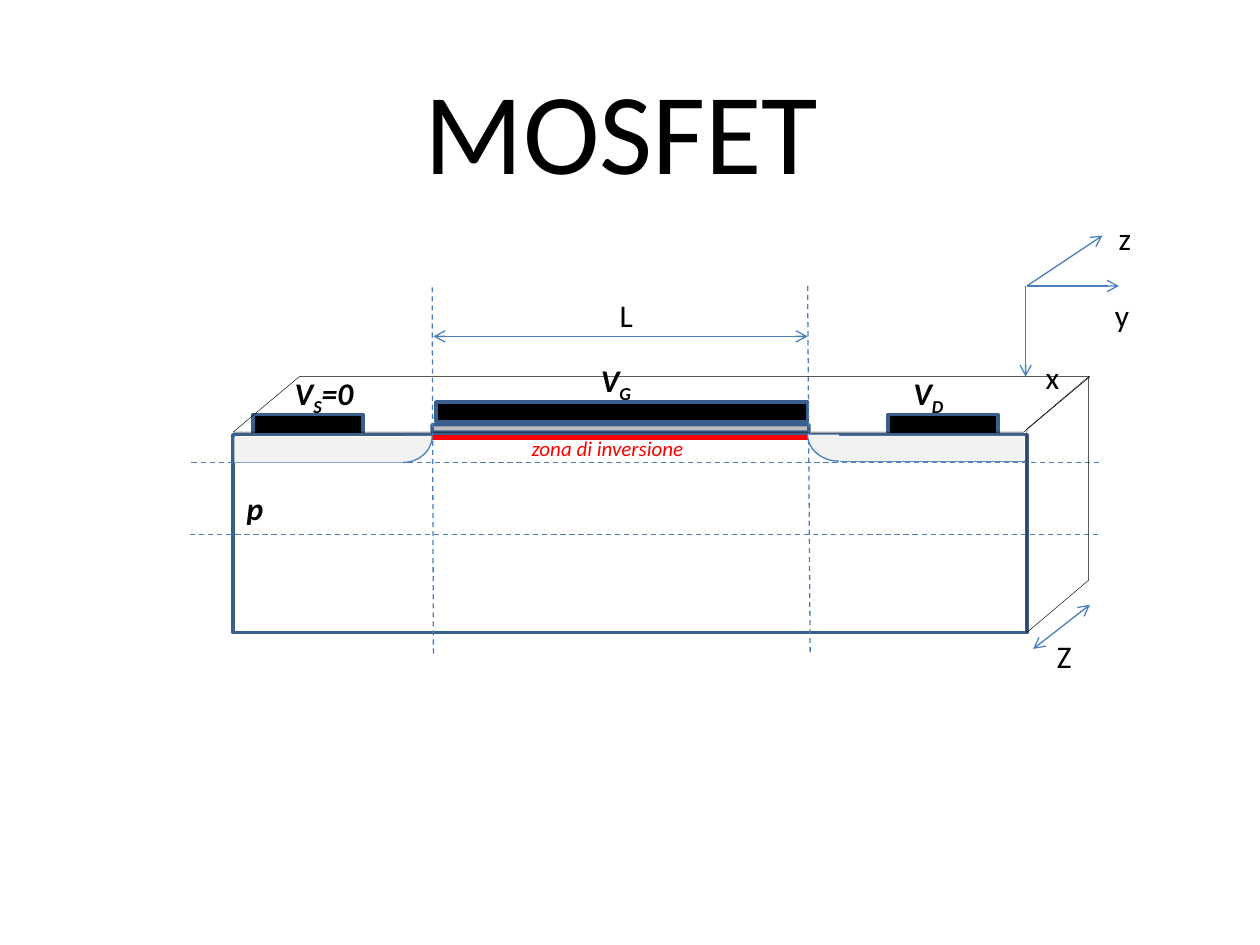
from lxml import etree
from pptx import Presentation
from pptx import util as u
from pptx.dml.color import RGBColor
from pptx.enum import dml, shapes, text
from pptx.oxml.ns import qn

PX = 9144  # EMU per px, 100 px to the inch
BLACK = RGBColor(0, 0, 0)
WHITE = RGBColor(255, 255, 255)
RED = RGBColor(255, 0, 0)
BLUE = RGBColor(0x4B, 0x7E, 0xBC)
NAVY = RGBColor(0x3A, 0x5F, 0x8C)
OXIDE = RGBColor(0xBF, 0xBF, 0xBF)
WELL = RGBColor(0xF2, 0xF2, 0xF2)

KIND = shapes.MSO_SHAPE
RECT, ROUND, SLANT, ARC = KIND.RECTANGLE, KIND.ROUNDED_RECTANGLE, KIND.PARALLELOGRAM, KIND.ARC
EDGE, THIN, HAIR = (NAVY, 2), (BLUE, 0.75), (BLACK, 0.25)

# Shapes: kind, (left, top, width, height), fill, line, other settings
DEVICE = [
    (RECT, (185, 345, 630, 157), None, EDGE, {}),  # substrate
    (RECT, (201, 329, 87, 16), BLACK, EDGE, {}),  # source contact
    (RECT, (705, 329, 87, 16), BLACK, EDGE, {}),  # drain contact
    (RECT, (327, 312, 331, 31), WHITE, None, {}),
    (RECT, (346, 319, 295, 16), BLACK, EDGE, {}),  # gate contact
    (ROUND, (343, 337, 299, 6), OXIDE, EDGE, {"flip": "flipV"}),
]
DEPTH_FACES = [
    (SLANT, (185, 299, 680, 44), None, HAIR, {"adjust": 1.194}),
    (SLANT, (738, 376, 203, 49), None, HAIR, {"adjust": 0.846, "turn": 270, "flip": "flipV"}),
]
WELL_CORNERS = [
    (ARC, (299, 323, 42, 46), WELL, THIN, {"turn": 90}),
    (ARC, (645, 320, 42, 50), WELL, THIN, {"turn": 270, "flip": "flipH"}),
]
WELL_BODIES = [
    (RECT, (186, 347, 134, 20), WELL, None, {}),
    (RECT, (666, 346, 147, 20), WELL, None, {}),
]

# Lines: start, end, (colour, points), style: dash, arrow or both
GUIDES = [
    ((151, 424), (874, 424), THIN, "dash"),
    ((343, 228), (344, 519), THIN, "dash"),
    ((641, 227), (643, 519), THIN, "dash"),
    ((152, 367), (875, 367), THIN, "dash"),
]
ARROWS = [
    ((344, 267), (641, 267), THIN, "both"),  # channel length
    ((815, 227), (888, 227), THIN, "arrow"),  # y axis
    ((814, 227), (814, 299), THIN, "arrow"),  # x axis
    ((815, 227), (875, 187), THIN, "arrow"),  # z axis
    ((820, 515), (865, 480), THIN, "both"),  # channel width
]
INVERSION_LAYER = [((343, 347), (642, 347), (RED, 3), "")]
WELL_FLOORS = [
    ((320, 367), (186, 367), THIN, ""),
    ((667, 366), (814, 366), THIN, ""),
]

# Labels: (left, top, width, height), runs (an underscore marks a subscript), format
PLAIN = {"size": u.Pt(18)}
STRONG = {"size": u.Pt(18), "bold": True, "italic": True}
LABELS = [
    ((482, 230, 31, 40), ["L"], PLAIN),
    ((875, 230, 32, 40), ["y"], PLAIN),
    ((820, 279, 32, 40), ["x"], PLAIN),
    ((878, 169, 30, 40), ["z"], PLAIN),
    ((829, 501, 32, 40), ["Z"], PLAIN),
    ((186, 383, 34, 40), ["p"], STRONG),
    ((224, 292, 68, 40), ["V", "_S", "=0"], STRONG),
    ((715, 292, 46, 40), ["V", "_D"], STRONG),
    ((467, 282, 45, 40), ["V", "_G"], STRONG),
    ((412, 341, 142, 30), ["zona di inversione"], {"size": u.Pt(12), "italic": True, "color": RED}),
    ((327, 42, 336, 121), ["MOSFET"], {"size": u.Pt(66)}),
]


def px(values):
    return [value * PX for value in values]


def add_shapes(page, items):
    for kind, place, fill, line, extra in items:
        shape = page.shapes.add_shape(kind, *px(place))
        shape.shadow.inherit = False
        if fill is None:
            shape.fill.background()
        else:
            shape.fill.solid()
            shape.fill.fore_color.rgb = fill
        if line is None:
            shape.line.fill.background()
        else:
            shape.line.color.rgb, shape.line.width = line[0], u.Pt(line[1])
        shape.rotation = extra.get("turn", 0)
        if "adjust" in extra:
            shape.adjustments[0] = extra["adjust"]
        if "flip" in extra:
            shape._element.spPr.xfrm.set(extra["flip"], "1")


def add_lines(page, items):
    ends = {"arrow": ["tailEnd"], "both": ["headEnd", "tailEnd"]}
    for start, end, (color, width), style in items:
        line = page.shapes.add_connector(shapes.MSO_CONNECTOR.STRAIGHT, *px(start + end))
        line.line.color.rgb, line.line.width = color, u.Pt(width)
        if style == "dash":
            line.line.dash_style = dml.MSO_LINE.DASH
        for tag in ends.get(style, []):
            etree.SubElement(line.line._get_or_add_ln(), qn("a:" + tag), type="arrow")
        etree.SubElement(line._element.spPr, qn("a:effectLst"))


def add_labels(page, items):
    for place, runs, style in items:
        frame = page.shapes.add_textbox(*px(place)).text_frame
        frame.word_wrap = False
        frame.auto_size = text.MSO_AUTO_SIZE.SHAPE_TO_FIT_TEXT
        for words in runs:
            span = frame.paragraphs[0].add_run()
            span.text = words.lstrip("_")
            look = {"name": "Calibri", "color": BLACK, **style}
            span.font.color.rgb = look.pop("color")
            for key, value in look.items():
                setattr(span.font, key, value)
            if words.startswith("_"):
                span.font._element.set("baseline", "-25000")


def main():
    deck = Presentation()
    deck.slide_width, deck.slide_height = px((1000, 750))
    page = deck.slides.add_slide(deck.slide_layouts[6])
    # Device and guides, then the depth faces, then the doped wells
    add_shapes(page, DEVICE)
    add_lines(page, GUIDES + ARROWS)
    add_shapes(page, DEPTH_FACES)
    add_lines(page, INVERSION_LAYER)
    add_shapes(page, WELL_CORNERS)
    add_lines(page, WELL_FLOORS)
    add_shapes(page, WELL_BODIES)
    add_labels(page, LABELS)
    deck.save("out.pptx")


if __name__ == "__main__":
    main()
